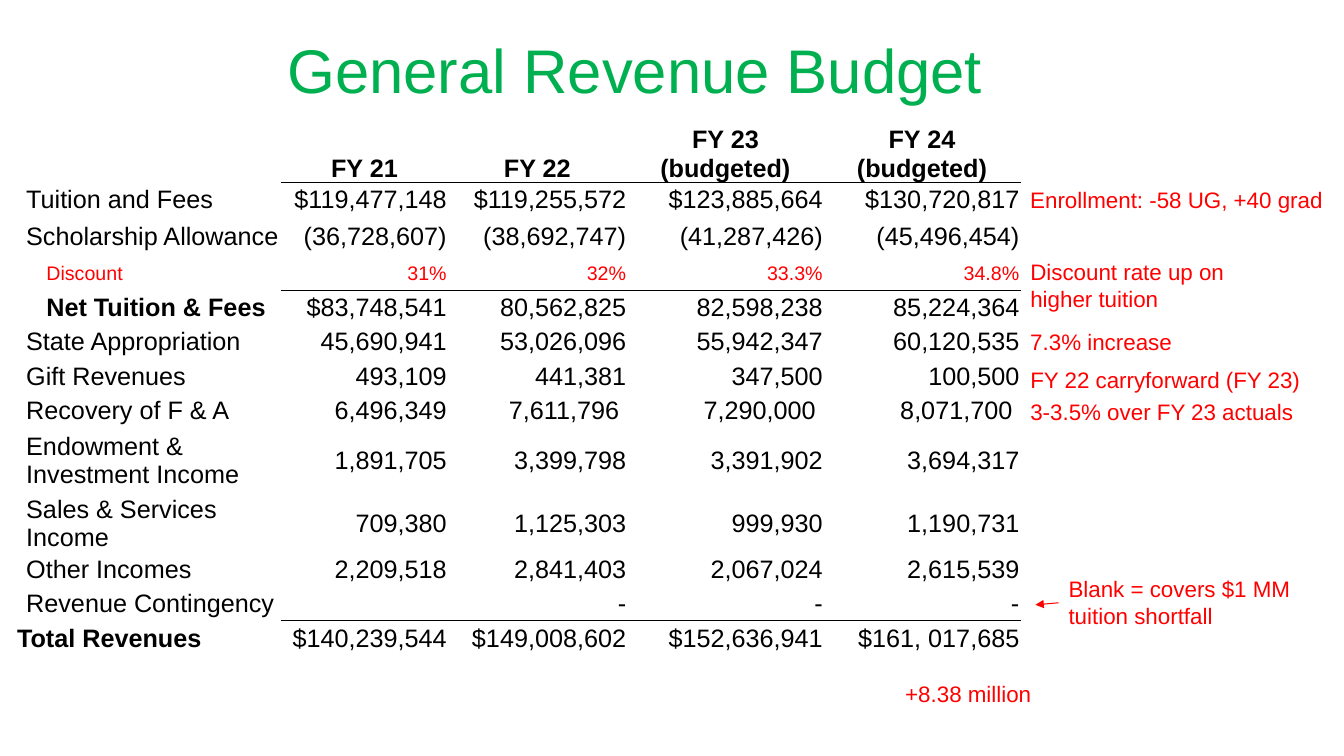
from lxml import etree
from pptx import Presentation
from pptx.dml.color import RGBColor
from pptx.enum.shapes import MSO_CONNECTOR
from pptx.enum.text import MSO_ANCHOR as Anchor, MSO_AUTO_SIZE as AutoSize, PP_ALIGN as Align
from pptx.oxml import parse_xml
from pptx.oxml.ns import nsdecls, qn
from pptx.util import Pt

# Content
TITLE = "General Revenue Budget"
HEADER = ["", "FY 21", "FY 22", "FY 23 (budgeted)", "FY 24\n(budgeted)"]
# height, label indent, label and yearly values
REVENUES = [
    (34, 10, ["Tuition and Fees", "$119,477,148", "$119,255,572", "$123,885,664", "$130,720,817"]),
    (39, 10, ["Scholarship Allowance", "(36,728,607)", "(38,692,747)", "(41,287,426)", "(45,496,454)"]),
    (34, 30, ["Discount", "31%", "32%", "33.3%", "34.8%"]),
    (34, 30, ["Net Tuition & Fees", "$83,748,541", "80,562,825", "82,598,238", "85,224,364"]),
    (34, 10, ["State Appropriation", "45,690,941", "53,026,096", "55,942,347", "60,120,535"]),
    (34, 10, ["Gift Revenues", "493,109", "441,381", "347,500", "100,500"]),
    (34, 10, ["Recovery of F & A", "6,496,349", "7,611,796 ", "7,290,000 ", "8,071,700 "]),
    (66, 10, ["Endowment & Investment Income", "1,891,705", "3,399,798", "3,391,902", "3,694,317"]),
    (58, 10, ["Sales & Services Income", "709,380", "1,125,303", "999,930", "1,190,731"]),
    (34, 10, ["Other Incomes", "2,209,518", "2,841,403", "2,067,024", "2,615,539"]),
    (34, 10, ["Revenue Contingency", "", "-", "-", "-"]),
    (34, 1, ["Total Revenues", "$140,239,544", "$149,008,602", "$152,636,941", "$161, 017,685"]),
]
BOLD_LABELS = {"Net Tuition & Fees", "Total Revenues"}
RULED_BELOW = {"", "Discount", "Revenue Contingency"}
COLUMNS = [263, 165, 178, 195, 195]
CONTINGENCY = "Blank = covers $1 MM tuition shortfall"
# left, top, width, height, text
REMARKS = [
    (1012, 180, 314, 37, "Enrollment: -58 UG, +40 grad"),
    (1012, 251, 321, 64, "Discount rate up on\nhigher tuition"),
    (1012, 321, 283, 37, "7.3% increase"),
    (1012, 358, 305, 37, "FY 22 carryforward (FY 23)"),
    (1012, 390, 305, 37, "3-3.5% over FY 23 actuals"),
    (1050, 566, 283, 64, CONTINGENCY),
    (888, 670, 360, 37, "+8.38 million"),
]
FONT, BLACK, WHITE, RED, GREEN = "Arial", "000000", "FFFFFF", "FF0000", "00B050"


def px(length):
    """100 px to the inch."""
    return length * 9144


def color(value):
    return RGBColor.from_string(value)


def write(frame, text, size, ink, align=Align.LEFT, bold=False):
    frame.text = text
    for paragraph in frame.paragraphs:
        paragraph.alignment = align
        for run in paragraph.runs:
            font = run.font
            font.name, font.size, font.bold = FONT, Pt(size), bold
            font.color.rgb = color(ink)


def rule(cell, side):
    cell._tc.get_or_add_tcPr().insert(0, parse_xml(
        f'<a:{side} {nsdecls("a")} w="12700"><a:solidFill><a:srgbClr val="{BLACK}"/>'
        f'</a:solidFill></a:{side}>'))


prs = Presentation()
prs.slide_width, prs.slide_height = px(1333), px(750)
slide = prs.slides.add_slide(prs.slide_layouts[5])
shapes = slide.shapes

# Title
title = shapes.title
title.left, title.top, title.width, title.height = map(px, (55, 0, 1150, 145))
title.text_frame.vertical_anchor = Anchor.MIDDLE
write(title.text_frame, TITLE, 44, GREEN, Align.CENTER)
title.text_frame.paragraphs[0].line_spacing = 0.9

# Budget table
rows = [(58, 1, HEADER)] + REVENUES
budget = shapes.add_table(len(rows), len(COLUMNS), px(16), px(123), px(sum(COLUMNS)),
                          px(sum(height for height, _, _ in rows))).table
budget.first_row = budget.horz_banding = False
for column, width in zip(budget.columns, COLUMNS):
    column.width = px(width)
for r, (height, indent, entries) in enumerate(rows):
    budget.rows[r].height = px(height)
    label = entries[0]
    size, ink = (14, RED) if label == "Discount" else (18, BLACK)
    for c, entry in enumerate(entries):
        cell = budget.cell(r, c)
        cell.fill.solid()
        cell.fill.fore_color.rgb = color(WHITE)
        cell.margin_left = px(1 if c else indent)
        cell.margin_right = cell.margin_top = px(1)
        cell.margin_bottom = 0
        cell.vertical_anchor = Anchor.MIDDLE if r else Anchor.BOTTOM
        align = Align.CENTER if r == 0 else Align.RIGHT if c else Align.LEFT
        write(cell.text_frame, entry, size, ink, align, r == 0 or entry in BOLD_LABELS)
        if c and label in RULED_BELOW:
            rule(cell, "lnB")
        elif c and rows[r - 1][2][0] in RULED_BELOW:
            rule(cell, "lnT")

# Remarks beside and below the table
remark_boxes = {}
for left, top, width, height, text in REMARKS:
    box = shapes.add_textbox(px(left), px(top), px(width), px(height))
    box.text_frame.word_wrap = True
    box.text_frame.auto_size = AutoSize.SHAPE_TO_FIT_TEXT
    write(box.text_frame, text, 16, RED)
    remark_boxes[text] = box

# Arrow from the contingency remark to its row
arrow = shapes.add_connector(MSO_CONNECTOR.STRAIGHT, px(1050), px(598), px(1027), px(600))
arrow.begin_connect(remark_boxes[CONTINGENCY], 1)
arrow.line.color.rgb = color(RED)
arrow.line.width = Pt(0.75)
etree.SubElement(arrow.line._get_or_add_ln(), qn("a:tailEnd"), type="triangle")
etree.SubElement(arrow._element.spPr, qn("a:effectLst"))

prs.save("out.pptx")
